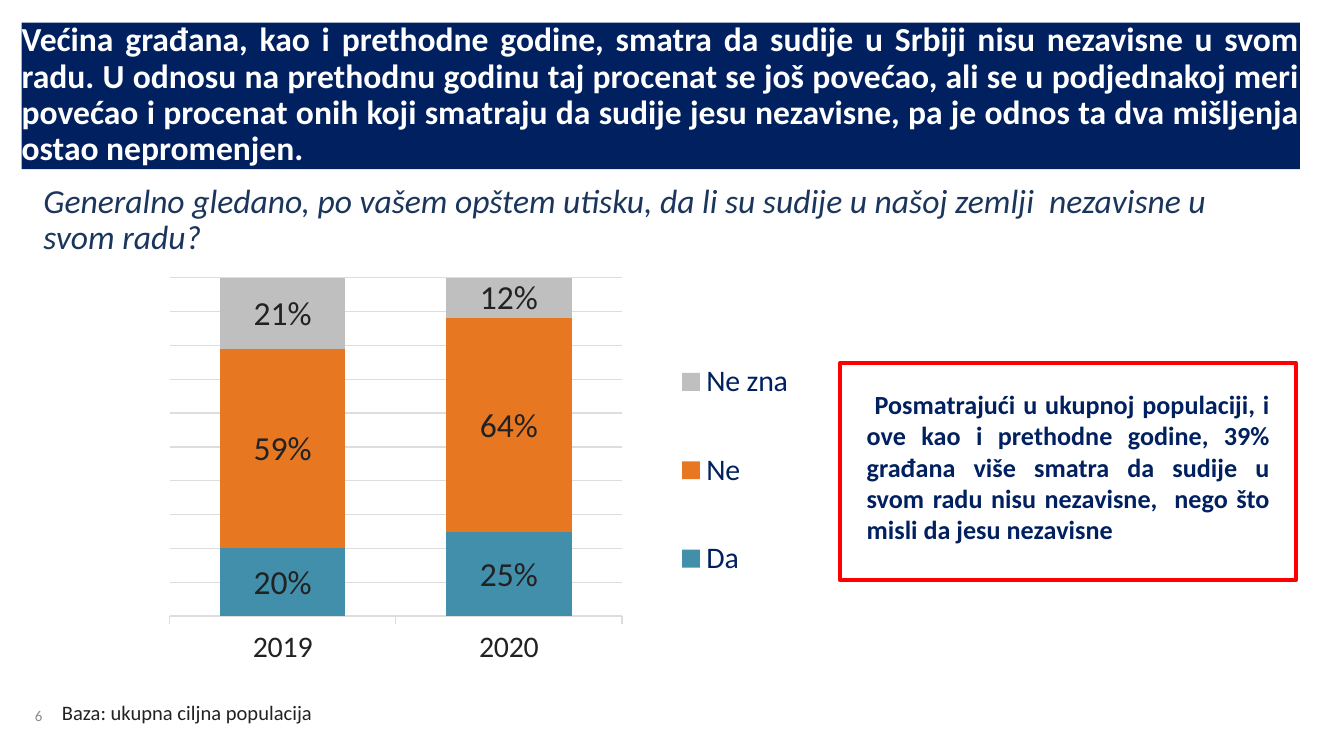
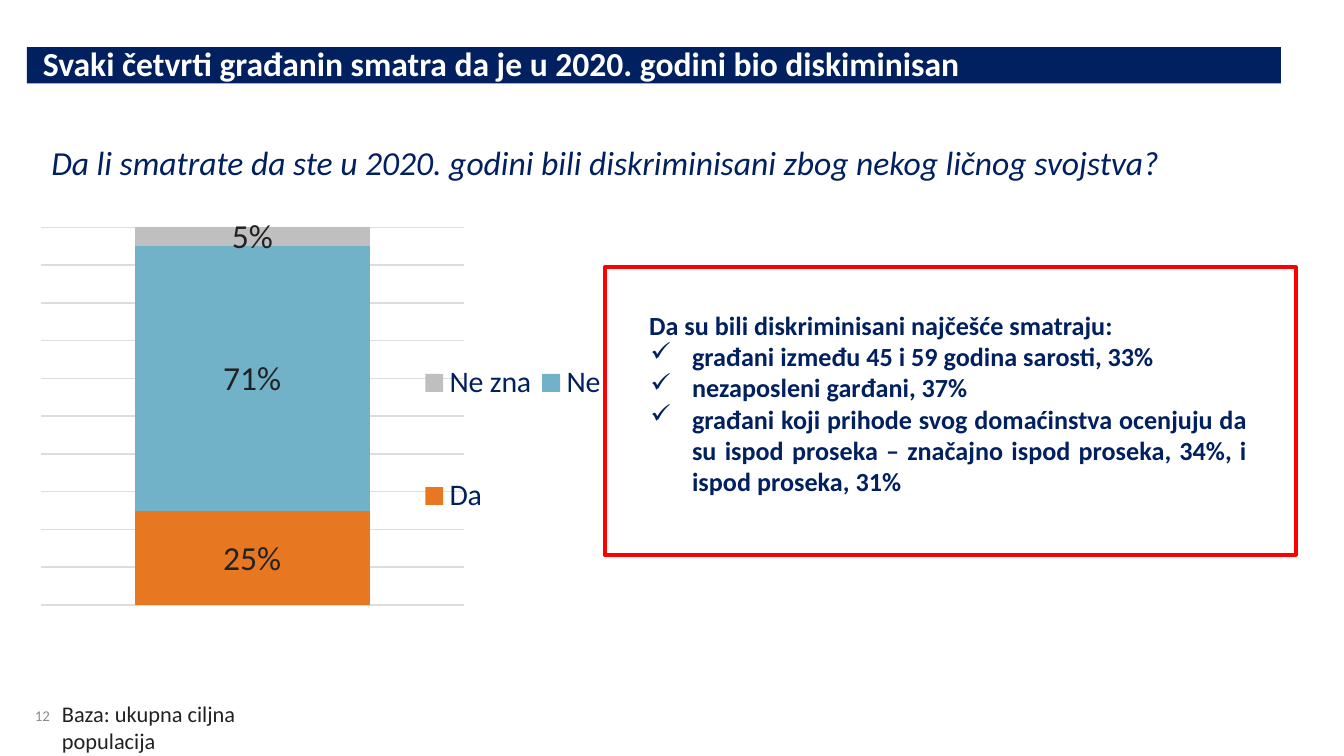
from dataclasses import dataclass

from lxml.etree import SubElement
from pptx import Presentation
from pptx.chart.data import CategoryChartData
from pptx.dml.color import RGBColor
from pptx.enum.chart import (XL_CHART_TYPE, XL_LABEL_POSITION,
                             XL_LEGEND_POSITION, XL_TICK_LABEL_POSITION,
                             XL_TICK_MARK)
from pptx.enum.shapes import MSO_SHAPE
from pptx.enum.text import MSO_ANCHOR, PP_ALIGN
from pptx.oxml import parse_xml
from pptx.oxml.ns import nsdecls, qn
from pptx.util import Cm, Pt


@dataclass(frozen=True)
class Theme:
    font: str = "Calibri"
    navy: str = "002060"
    slate: str = "1B365D"
    ink: str = "222223"
    white: str = "FFFFFF"
    muted: str = "888B8D"
    grid: str = "DDDDDE"
    red: str = "FF0000"
    teal: str = "418FAB"
    sky: str = "71B2C9"
    orange: str = "E87722"
    silver: str = "BFBFBF"
    title: int = 18
    legend: int = 16
    note: int = 14
    base: int = 11
    chart: int = 10
    number: int = 8


T = Theme()


def rgb(color):
    return RGBColor.from_string(color)


def assign(target, values):
    for name, value in values.items():
        setattr(target, name, value)


def style_font(font, size, color, **extra):
    assign(font, {"name": T.font, "size": Pt(size), **extra})
    font.color.rgb = rgb(color)


def style_line(line, color, width):
    line.color.rgb = rgb(color)
    line.width = Pt(width)


def place(parent, box, inner=False):
    """Give a plot area or legend a manual layout in fractions of the chart."""
    target = '<c:layoutTarget val="inner"/>' if inner else ""
    modes = "".join(f'<c:{k}Mode val="edge"/>' for k in "xy")
    sizes = "".join(f'<c:{k} val="{v}"/>' for k, v in zip("xywh", box))
    layout = parse_xml(f'<c:layout {nsdecls("c")}><c:manualLayout>{target}{modes}'
                       f'{sizes}</c:manualLayout></c:layout>')
    for old in parent.findall(qn("c:layout")):
        parent.remove(old)
    parent.insert(0 if inner else 1, layout)


class Deck:
    def __init__(self):
        self.prs = Presentation()
        assign(self.prs, {"slide_width": Cm(25.4), "slide_height": Cm(14.29)})
        self.s = None

    def new_slide(self, number):
        self.s = self.prs.slides.add_slide(self.prs.slide_layouts[6])
        self.text((0.66, 13.03, 0.86, 0.66), [str(number)], T.number, T.muted,
                  wrap=False, anchor=MSO_ANCHOR.BOTTOM, para={"line_spacing": 0.85})

    def rect(self, box):
        sp = self.s.shapes.add_shape(MSO_SHAPE.RECTANGLE, *map(Cm, box))
        sp.shadow.inherit = False
        return sp

    def text(self, box, lines, size, color, sp=None, wrap=True, anchor=MSO_ANCHOR.TOP,
             inset=(0, 0), para=None, indent=0, bullets=False, **font):
        """Write lines; with bullets, every line after the first gets a tick."""
        sp = sp or self.s.shapes.add_textbox(*map(Cm, box))
        tf = sp.text_frame
        dx, dy = map(Cm, inset)
        assign(tf, {"word_wrap": wrap, "vertical_anchor": anchor, "margin_left": dx,
                    "margin_right": dx, "margin_top": dy, "margin_bottom": dy})
        for i, line in enumerate(lines):
            p = tf.paragraphs[0] if i == 0 else tf.add_paragraph()
            assign(p, {"alignment": PP_ALIGN.LEFT, **(para or {})})
            r = p.add_run()
            r.text = line
            style_font(r.font, size, color, **font)
            ppr = p._p.get_or_add_pPr()
            if indent:
                ppr.set("marL", str(Cm(indent)))
            if bullets and i:
                ppr.set("marL", str(Cm(0.81)))
                ppr.set("indent", str(Cm(-0.79)))
                SubElement(ppr, qn("a:buChar"), char="✓")

    def title(self, box, line, indent=0):
        sp = self.rect(box)
        sp.fill.solid()
        sp.fill.fore_color.rgb = rgb(T.navy)
        sp.line.fill.background()
        self.text(box, [line], T.title, T.white, sp=sp, indent=indent, bold=True,
                  para={"alignment": PP_ALIGN.JUSTIFY, "line_spacing": 0.9,
                        "space_before": Pt(4.1)})

    def question(self, box, line, color):
        self.text(box, [line], T.title, color, anchor=MSO_ANCHOR.BOTTOM,
                  inset=(0.18, 0.1), para={"line_spacing": 0.9}, italic=True)

    def base(self, size):
        self.text((1.17, 13.23, 5, 0.5), ["Baza: ukupna ciljna populacija"],
                  size, T.ink, wrap=False)

    def note(self, frame, box, lines):
        self.text(box, lines, T.note, T.navy, bullets=True, bold=True,
                  para={"alignment": PP_ALIGN.JUSTIFY})
        sp = self.rect(frame)
        sp.fill.background()
        style_line(sp.line, T.red, 2)

    def stacked_chart(self, box, cats, series, plot_box, legend_box, show_cats=True):
        """Draw 100 % columns from (name, values, colour) rows."""
        data = CategoryChartData()
        data.categories = cats
        for name, values, _ in series:
            data.add_series(name, values)
        chart = self.s.shapes.add_chart(XL_CHART_TYPE.COLUMN_STACKED_100,
                                        *map(Cm, box), data).chart
        assign(chart, {"has_title": False, "has_legend": True})
        style_font(chart.font, T.chart, T.ink)
        assign(chart.legend, {"position": XL_LEGEND_POSITION.RIGHT,
                              "include_in_layout": False})
        style_font(chart.legend.font, T.legend, T.navy)
        place(chart.legend._element, legend_box)
        place(chart._chartSpace.chart.plotArea, plot_box, inner=True)

        values, categories = chart.value_axis, chart.category_axis
        assign(values, {"has_major_gridlines": True, "visible": False})
        style_line(values.major_gridlines.format.line, T.grid, 0.75)
        assign(categories, {"visible": show_cats,
                            "major_tick_mark": XL_TICK_MARK.OUTSIDE,
                            "tick_label_position": XL_TICK_LABEL_POSITION.LOW})
        style_line(categories.format.line, T.grid, 0.75)
        style_font(categories.tick_labels.font, T.legend, T.ink)

        plot = chart.plots[0]
        assign(plot, {"gap_width": 80, "overlap": 100, "vary_by_categories": False})
        for ser, (_, _, color) in zip(plot.series, series):
            ser.format.fill.solid()
            ser.format.fill.fore_color.rgb = rgb(color)
            assign(ser.data_labels, {"show_value": True, "number_format": r"0\%",
                                     "number_format_is_linked": False,
                                     "position": XL_LABEL_POSITION.CENTER})
            style_font(ser.data_labels.font, T.title, T.ink, bold=False)


def judges_slide(deck):
    deck.new_slide(6)
    deck.question((0.64, 3.56, 23.7, 1.4),
                  "Generalno gledano, po vašem opštem utisku, da li su sudije u našoj "
                  "zemlji  nezavisne u svom radu?", T.slate)
    deck.stacked_chart((2.92, 4.85, 14.25, 8), ["2019", "2020"],
                       [("Da", (20, 25), T.teal),
                        ("Ne", (59, 64), T.orange),
                        ("Ne zna", (21, 12), T.silver)],
                       (0.02, 0.05, 0.6, 0.8), (0.67, 0.13, 0.2, 0.75))
    deck.base(T.base)
    deck.title((0.41, 0.43, 24.16, 2.77),
               "Većina građana, kao i prethodne godine, smatra da sudije u Srbiji nisu "
               "nezavisne u svom radu. U odnosu na prethodnu godinu taj procenat se još "
               "povećao, ali se u podjednakoj meri povećao i procenat onih koji smatraju "
               "da sudije jesu nezavisne, pa je odnos ta dva mišljenja ostao nepromenjen.")
    deck.note((15.88, 6.86, 8.61, 4.11), (16.38, 7.34, 7.62, 3),
              [" Posmatrajući u ukupnoj populaciji, i ove kao i prethodne godine, 39% "
               "građana više smatra da sudije u svom radu nisu nezavisne,  nego što "
               "misli da jesu nezavisne"])


def discrimination_slide(deck):
    deck.new_slide(12)
    deck.question((0.79, 2.79, 23.7, 0.76),
                  "Da li smatrate da ste u 2020. godini bili diskriminisani zbog nekog "
                  "ličnog svojstva?", T.navy)
    deck.stacked_chart((0.51, 3.86, 13.31, 8.81), ["1"],
                       [("Da", (25,), T.orange),
                        ("Ne", (71,), T.sky),
                        ("Ne zna", (5,), T.silver)],
                       (0.02, 0.05, 0.6, 0.81), (0.55, 0.18, 0.28, 0.65),
                       show_cats=False)
    deck.base(T.base + 1)
    deck.title((0.51, 0.89, 23.7, 0.69),
               "Svaki četvrti građanin smatra da je u 2020. godini bio diskiminisan",
               indent=0.3)
    deck.note((11.43, 5.05, 13.06, 5.44), (12.27, 5.84, 11.3, 3.58),
              ["Da su bili diskriminisani najčešće smatraju:",
               "građani između 45 i 59 godina sarosti, 33%",
               "nezaposleni garđani, 37%",
               "građani koji prihode svog domaćinstva ocenjuju da su ispod proseka – "
               "značajno ispod proseka, 34%, i ispod proseka, 31%"])


def main():
    deck = Deck()
    judges_slide(deck)
    discrimination_slide(deck)
    deck.prs.save("out.pptx")


if __name__ == "__main__":
    main()
